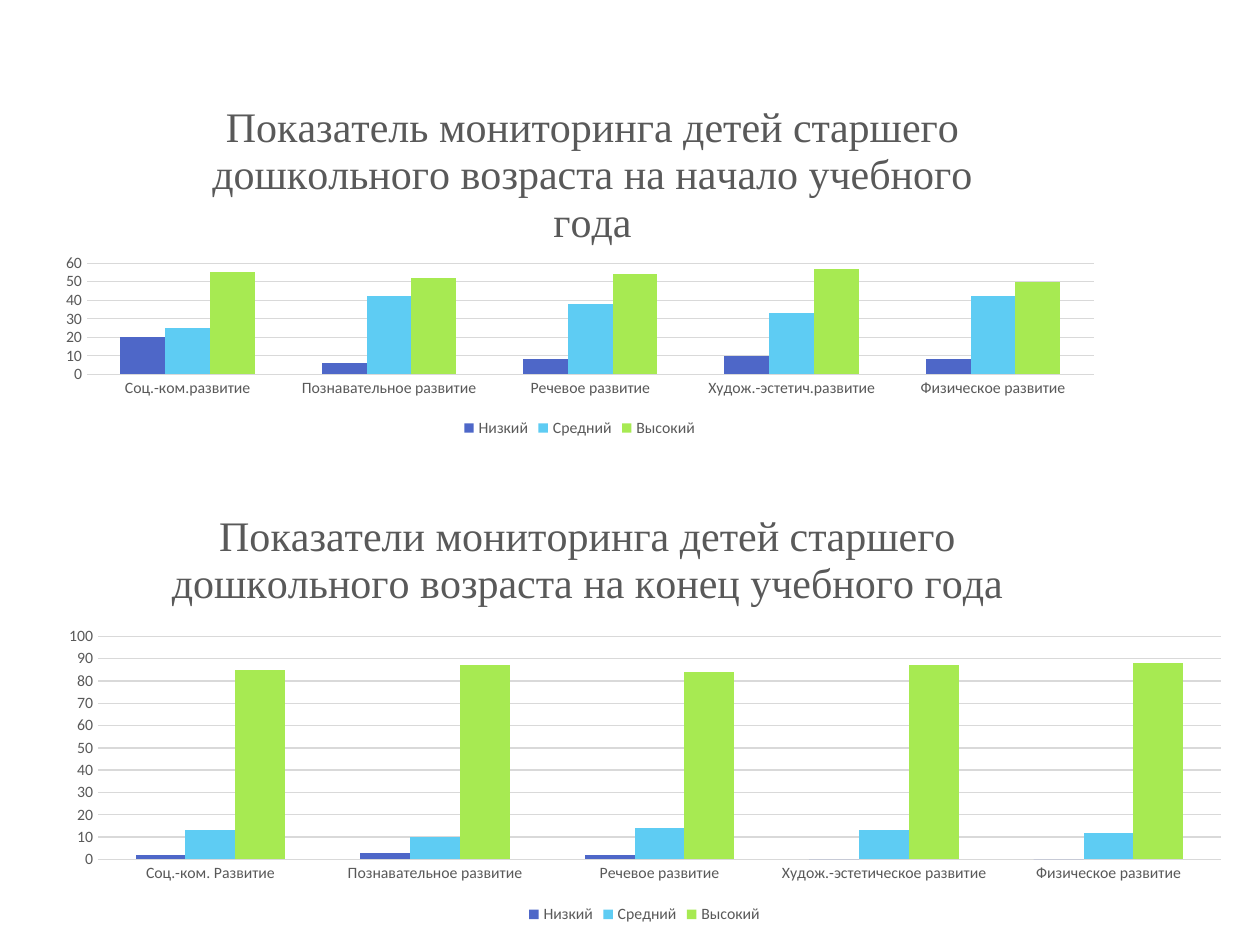
import pptx
import pptx.chart.data
import pptx.dml.color
import pptx.enum.chart
import pptx.oxml
import pptx.oxml.ns
import pptx.util

COLORS = {
    "background": "FFFFFF",
    "text": "595959",
    "grid": "D9D9D9",
    "Низкий": "4E67C8",
    "Средний": "5ECCF3",
    "Высокий": "A7EA52",
}


def rgb(name):
    return pptx.dml.color.RGBColor.from_string(COLORS[name])


class MonitoringSlide:
    """Holds the shared style and the current slide."""

    title_font = "Times New Roman"
    label_font = "Calibri"
    title_size = pptx.util.Pt(24)
    label_size = pptx.util.Pt(9)

    def __init__(self, presentation):
        self.slide = presentation.slides.add_slide(presentation.slide_layouts[6])
        fill = self.slide.background.fill
        fill.solid()
        fill.fore_color.rgb = rgb("background")

    def style_font(self, font, name, size):
        font.name = name
        font.size = size
        font.bold = False
        font.color.rgb = rgb("text")

    def place(self, element, index, **fractions):
        """Set a manual layout, in fractions of the chart."""
        for layout in element.findall(pptx.oxml.ns.qn("c:layout")):
            element.remove(layout)
        target = '<c:layoutTarget val="inner"/>' if "w" in fractions else ""
        modes = '<c:xMode val="edge"/><c:yMode val="edge"/>'
        values = "".join(f'<c:{key} val="{value}"/>' for key, value in fractions.items())
        element.insert(index, pptx.oxml.parse_xml(
            f'<c:layout {pptx.oxml.ns.nsdecls("c")}><c:manualLayout>'
            f"{target}{modes}{values}</c:manualLayout></c:layout>"))

    def add_title(self, chart, text, position):
        chart.has_title = True
        title = chart.chart_title
        run = title.text_frame.paragraphs[0].add_run()
        run.text = text
        self.style_font(run.font, self.title_font, self.title_size)
        title.include_in_layout = False
        self.place(title._element, 1, **position)

    def style_axes(self, chart, maximum):
        for axis in (chart.category_axis, chart.value_axis):
            axis.major_tick_mark = pptx.enum.chart.XL_TICK_MARK.NONE
            axis.minor_tick_mark = pptx.enum.chart.XL_TICK_MARK.NONE
            axis.format.line.fill.background()
            self.style_font(axis.tick_labels.font, self.label_font, self.label_size)
        value_axis = chart.value_axis
        value_axis.minimum_scale = 0
        value_axis.maximum_scale = maximum
        value_axis.major_unit = 10
        value_axis.has_major_gridlines = True
        line = value_axis.major_gridlines.format.line
        line.color.rgb = rgb("grid")
        line.width = pptx.util.Pt(0.75)

    def add_chart(self, box, title, title_position, plot_area, categories, series, maximum):
        data = pptx.chart.data.CategoryChartData()
        data.categories = categories
        for name, values in series.items():
            data.add_series(name, values)
        chart = self.slide.shapes.add_chart(
            pptx.enum.chart.XL_CHART_TYPE.COLUMN_CLUSTERED,
            *[pptx.util.Pt(length) for length in box], data).chart
        chart.font.name = self.label_font
        chart.font.size = pptx.util.Pt(10)

        # Title and axes
        self.add_title(chart, title, title_position)
        self.style_axes(chart, maximum)

        # Columns
        plot = chart.plots[0]
        plot.gap_width = 150
        plot.overlap = 0
        plot.vary_by_categories = False
        for column_series in plot.series:
            fill = column_series.format.fill
            fill.solid()
            fill.fore_color.rgb = rgb(column_series.name)
            column_series.invert_if_negative = False
        self.place(chart._chartSpace.chart.plotArea, 0, **plot_area)

        # Legend
        chart.has_legend = True
        chart.legend.position = pptx.enum.chart.XL_LEGEND_POSITION.BOTTOM
        chart.legend.include_in_layout = False
        self.style_font(chart.legend.font, self.label_font, self.label_size)


def main():
    presentation = pptx.Presentation()
    presentation.slide_width = pptx.util.Pt(720)
    presentation.slide_height = pptx.util.Pt(540)
    slide = MonitoringSlide(presentation)

    # Start of the school year
    slide.add_chart(
        box=(25.2, 37.44, 612, 215.28),
        title="Показатель мониторинга детей старшего дошкольного возраста на начало учебного года",
        title_position={"x": 0.15, "y": 0.07},
        plot_area={"x": 0.04, "y": 0.525, "w": 0.94, "h": 0.295},
        categories=["Соц.-ком.развитие", "Познавательное развитие", "Речевое развитие",
                    "Худож.-эстетич.развитие", "Физическое развитие"],
        series={"Низкий": (20, 6, 8, 10, 8),
                "Средний": (25, 42, 38, 33, 42),
                "Высокий": (55, 52, 54, 57, 50)},
        maximum=60)

    # End of the school year
    slide.add_chart(
        box=(25.2, 275.76, 686.16, 254.88),
        title="Показатели мониторинга детей старшего дошкольного возраста на конец учебного года",
        title_position={"x": 0.1, "y": 0.04},
        plot_area={"x": 0.045, "y": 0.345, "w": 0.935, "h": 0.5},
        categories=["Соц.-ком. Развитие", "Познавательное развитие", "Речевое развитие",
                    "Худож.-эстетическое развитие", "Физическое развитие"],
        series={"Низкий": (2, 3, 2, 0, 0),
                "Средний": (13, 10, 14, 13, 12),
                "Высокий": (85, 87, 84, 87, 88)},
        maximum=100)

    presentation.save("out.pptx")


if __name__ == "__main__":
    main()
